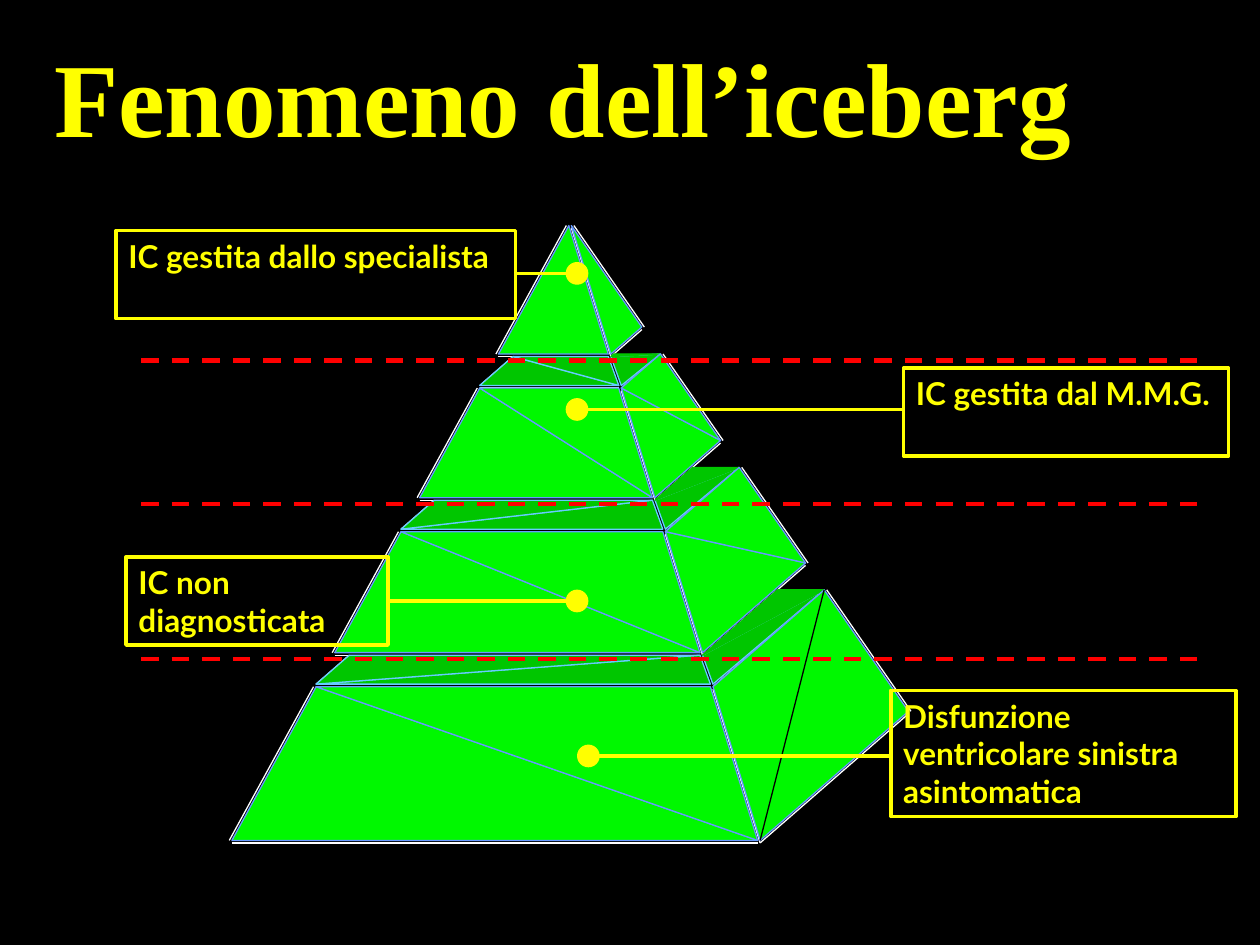
from dataclasses import dataclass
from itertools import pairwise

from lxml import etree
from pptx import Presentation
from pptx.dml.color import RGBColor
from pptx.enum.dml import MSO_LINE
from pptx.enum.shapes import MSO_CONNECTOR, MSO_SHAPE
from pptx.enum.text import MSO_ANCHOR, PP_ALIGN
from pptx.oxml.ns import qn
from pptx.util import Inches, Pt

LEFT = PP_ALIGN.LEFT
TOP, MIDDLE = MSO_ANCHOR.TOP, MSO_ANCHOR.MIDDLE
RECT, OVAL = MSO_SHAPE.RECTANGLE, MSO_SHAPE.OVAL
STRAIGHT = MSO_CONNECTOR.STRAIGHT
DASH = MSO_LINE.DASH


@dataclass(frozen=True)
class Theme:
    back: str = "000000"
    text: str = "FFFF00"
    level: str = "FF0000"
    edge: str = "FFFFFF"
    side: str = "00F800"
    lid: str = "00C600"
    sky: str = "66CCFF"
    blue: str = "6699FF"
    head: str = "Times New Roman"
    body: str = "Lato"
    big: int = 60
    small: int = 18
    thin: float = 0.75
    bold: float = 2
    thick: float = 2.5


T = Theme()
GAP = 0.02
DOT = 0.17
BERG = (1.84, 1.79, 5.35, 4.88)
CUTS = [(0, 1.02), (1.29, 2.16), (2.43, 3.39), (3.66, 4.88)]
NOTES = [
    ("IC gestita dallo specialista", (0.92, 1.83, 3.17, 0.7), (4.58, 2.17)),
    ("IC gestita dal M.M.G.", (7.17, 2.92, 2.58, 0.7), (4.58, 3.25)),
    ("IC non diagnosticata", (1, 4.42, 2.08, 0.7), (4.58, 4.77)),
    ("Disfunzione ventricolare sinistra asintomatica",
     (7.07, 5.48, 2.74, 1), (4.67, 6)),
]


@dataclass(frozen=True)
class Tier:
    front: list
    flank: list


def rgb(code):
    return RGBColor.from_string(code)


def shift(point, dx, dy):
    return point[0] + dx, point[1] + dy


def paint(shape, fill, line, width):
    shape.shadow.inherit = False
    for part, code in ((shape.fill, fill), (shape.line.fill, line)):
        if code:
            part.solid()
            part.fore_color.rgb = rgb(code)
        else:
            part.background()
    if line:
        shape.line.width = Pt(width)


def draw_line(shapes, start, end, code, width, dash=None):
    line = shapes.add_connector(STRAIGHT, *map(Inches, (*start, *end)))
    line.line.color.rgb = rgb(code)
    line.line.width = Pt(width)
    if dash:
        line.line.dash_style = dash
    etree.SubElement(line._element.spPr, qn("a:effectLst"))


def draw_face(shapes, points, fill, line):
    if len(set(points)) < len(points):
        return
    first, *rest = [tuple(map(Inches, point)) for point in points]
    pen = shapes.build_freeform(*first)
    pen.add_line_segments(rest, close=True)
    paint(pen.convert_to_shape(), fill, line, T.thin)


def draw_quad(shapes, quad, fill, near, far):
    a, b, c, d = quad
    draw_face(shapes, [a, b, c], fill, near)
    draw_face(shapes, [a, c, d], fill, far)


def write(shape, text, font, size, anchor):
    frame = shape.text_frame
    frame.word_wrap = True
    frame.vertical_anchor = anchor
    para = frame.paragraphs[0]
    para.text = text
    para.alignment = LEFT
    para.font.name = font
    para.font.size = Pt(size)
    para.font.bold = True
    para.font.color.rgb = rgb(T.text)
    return frame, para


def cut_tiers(x, y, w, h):
    peak = (x + w / 2, y)
    base = [(x, y + h), (x + 0.78 * w, y + h), (x + w, y + 0.79 * h)]

    def slice_at(drop):
        part = drop / h
        return [shift(peak, (a - peak[0]) * part, (b - peak[1]) * part)
                for a, b in base]

    tiers = []
    for top, bottom in CUTS:
        left, right, rear = slice_at(top)
        low_left, low_right, low_rear = slice_at(bottom)
        front = [left, low_left, low_right, right]
        flank = [shift(point, GAP, 0)
                 for point in (right, low_right, low_rear, rear)]
        tiers.append(Tier(front, flank))
    return tiers


def find_lids(upper, tier):
    near, far = tier.flank[1:3]
    slope = (far[0] - near[0]) / (near[1] - far[1])

    def recede(point, level):
        rise = point[1] - level
        return shift(point, rise * slope, -rise)

    left, right = (shift(tier.front[i], 0, -GAP) for i in (0, 3))
    inner = shift(upper.front[2], 0, GAP)
    front = [inner, right, left, recede(left, inner[1])]
    hinge = shift(upper.flank[1], 0, GAP)
    rear = tier.flank[3]
    flank = [hinge, shift(tier.flank[0], 0, -GAP), rear,
             recede(hinge, rear[1])]
    return front, flank


def add_edges(shapes, tier):
    left, low_left, low_right, right = tier.front
    seam, low_seam, low_rear, rear = tier.flank
    for start, end, dx, dy in (
        (left, low_left, -GAP, 0),
        (left, right, 0, 0),
        (low_left, low_right, 0, GAP),
        (seam, low_seam, 0, GAP),
        (low_seam, low_rear, 0, GAP),
        (seam, rear, 0, 0),
        (rear, low_rear, GAP, 0),
    ):
        if start != end:
            draw_line(shapes, shift(start, dx, dy), shift(end, dx, dy),
                      T.edge, T.thin)


def add_berg(slide, x, y, w, h):
    shapes = slide.shapes.add_group_shape().shapes
    tiers = cut_tiers(x, y, w, h)
    lids = [find_lids(*pair) for pair in pairwise(tiers)]
    for tier in tiers:
        add_edges(shapes, tier)
    for front, flank in lids:
        draw_line(shapes, front[2], front[3], T.edge, T.thin)
        if front is lids[0][0]:
            front = front[1:] + front[:1]
        draw_quad(shapes, front, T.lid, T.sky, T.sky)
        draw_quad(shapes, flank, T.lid, T.sky, T.lid)
    for tier in tiers:
        draw_quad(shapes, tier.front, T.side, T.blue, T.blue)
        if tier is not tiers[-1]:
            draw_quad(shapes, tier.flank, T.side, T.blue, T.blue)
    base = tiers[-1].flank
    draw_face(shapes, base, T.side, T.blue)
    draw_line(shapes, base[1], base[3], T.back, T.thin)


def add_note(slide, text, x, y, w, h, spot):
    shapes = slide.shapes
    box = shapes.add_shape(RECT, *map(Inches, (x, y, w, h)))
    paint(box, None, T.text, T.bold)
    para = write(box, text, T.body, T.small, TOP)[1]
    para.space_before = Pt(11.2)
    side = x + w if x < spot[0] else x
    draw_line(shapes, (side, spot[1]), spot, T.text, T.bold)
    corner = shift(spot, -DOT / 2, -DOT / 2)
    dot = shapes.add_shape(OVAL, *map(Inches, (*corner, DOT, DOT)))
    paint(dot, T.text, T.text, T.thin)


def add_levels(slide, x, y, w):
    for _, bottom in CUTS[:-1]:
        start = (x, y + bottom)
        draw_line(slide.shapes, start, shift(start, w, 0),
                  T.level, T.thick, DASH)


def add_title(slide, x, y, w, h):
    box = slide.shapes.add_textbox(*map(Inches, (x, y, w, h)))
    frame = write(box, "Fenomeno dell’iceberg", T.head, T.big, MIDDLE)[0]
    frame.margin_left = frame.margin_right = 0
    frame.margin_top = frame.margin_bottom = 0


def main():
    deck = Presentation()
    deck.slide_width, deck.slide_height = Inches(10), Inches(7.5)
    slide = deck.slides.add_slide(deck.slide_layouts[6])
    slide.background.fill.solid()
    slide.background.fill.fore_color.rgb = rgb(T.back)
    add_berg(slide, *BERG)
    for text, box, spot in NOTES:
        add_note(slide, text, *box, spot)
    add_levels(slide, 1.12, BERG[1] + 0.05, 8.42)
    add_title(slide, 0.43, 0, 10, 1.51)
    deck.save("out.pptx")


if __name__ == "__main__":
    main()
